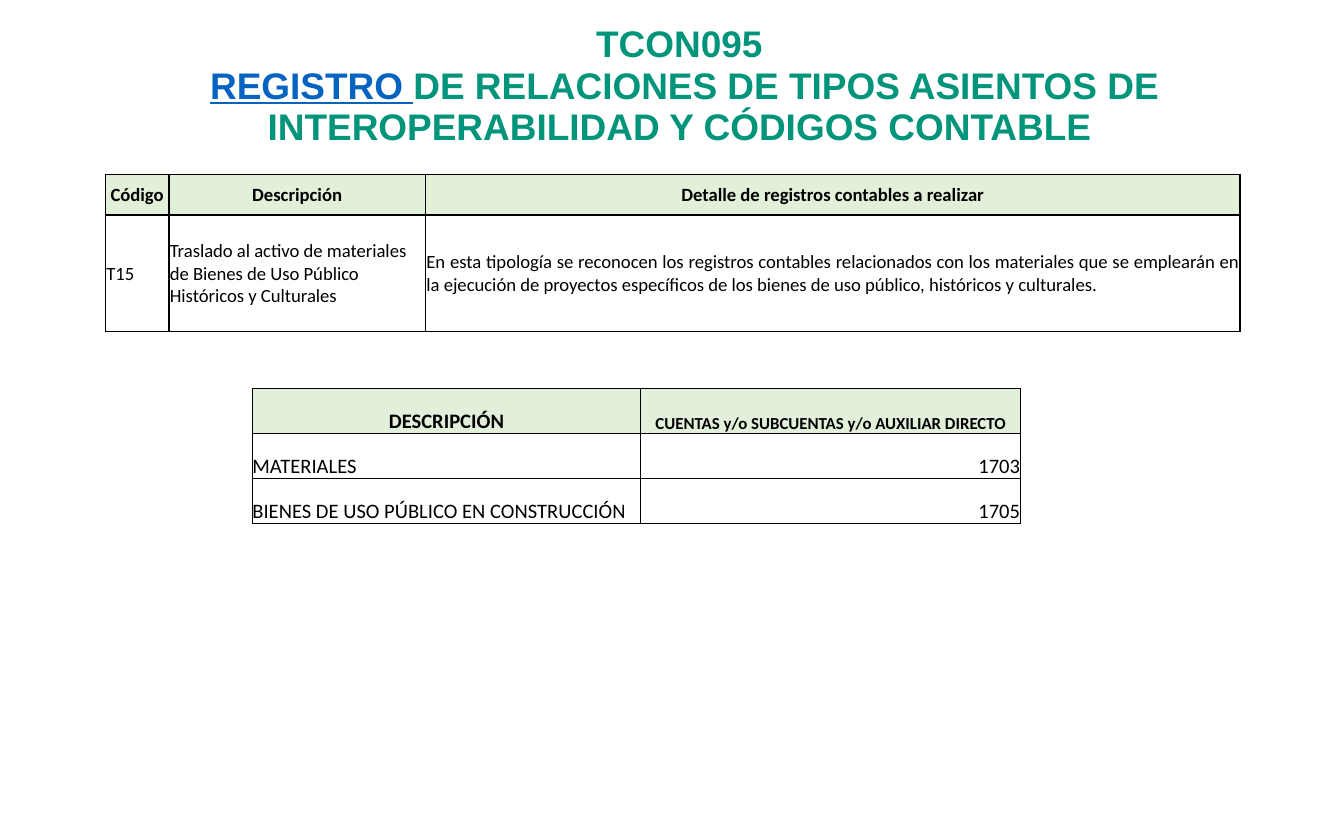
from lxml import etree
from pptx import Presentation
from pptx import util as u
from pptx.dml.color import RGBColor
from pptx.enum import text
from pptx.oxml import ns

GREEN = RGBColor(0x00, 0x94, 0x7A)
BLUE = RGBColor(0x05, 0x63, 0xC1)
BLACK = RGBColor(0x00, 0x00, 0x00)
HEADER_SAGE = RGBColor(0xE2, 0xEF, 0xD9)
HEADER_MINT = RGBColor(0xE2, 0xEF, 0xDA)

LEFT, CENTER = text.PP_ALIGN.LEFT, text.PP_ALIGN.CENTER
RIGHT, JUSTIFY = text.PP_ALIGN.RIGHT, text.PP_ALIGN.JUSTIFY
MIDDLE, BOTTOM = text.MSO_ANCHOR.MIDDLE, text.MSO_ANCHOR.BOTTOM


def write(para, words, size=10, font="Calibri", color=BLACK, bold=False, underline=False):
    """Append words to a paragraph, turning each newline into a line break."""
    for index, line in enumerate(words.split("\n")):
        if index:
            para.add_line_break()
        if line:
            span = para.add_run()
            span.text = line
            span.font.size = u.Pt(size)
            span.font.name = font
            span.font.color.rgb = color
            span.font.bold = bold
            span.font.underline = underline


def add_title(page):
    """Add the three-line title with its underlined first word."""
    box = page.shapes.add_textbox(u.Cm(0.28), u.Cm(0.66), u.Cm(25.12), u.Cm(2.72))
    frame = box.text_frame
    frame.word_wrap = True
    frame.vertical_anchor = MIDDLE
    para = frame.paragraphs[0]
    para.alignment = CENTER
    para.line_spacing = 0.94
    style = {"size": 19.8, "font": "Arial", "bold": True}
    write(para, "TCON095\n ", color=GREEN, **style)
    write(para, "REGISTRO ", color=BLUE, underline=True, **style)
    write(para, "DE RELACIONES DE TIPOS ASIENTOS DE INTEROPERABILIDAD Y CÓDIGOS CONTABLE\n",
          color=GREEN, **style)


def add_borders(cell, width):
    """Draw a black line on the four sides of a cell."""
    properties = cell._tc.get_or_add_tcPr()
    for index, side in enumerate(("lnL", "lnR", "lnT", "lnB")):
        line = etree.Element(ns.qn(f"a:{side}"), w=str(u.Pt(width)))
        fill = etree.SubElement(line, ns.qn("a:solidFill"))
        etree.SubElement(fill, ns.qn("a:srgbClr"), val=str(BLACK))
        properties.insert(index, line)


def add_grid(page, left, top, widths, heights, rows, aligns, sizes, header, anchor, border, inset):
    """Add a bordered table whose first row is a bold, centred, filled header."""
    frame = page.shapes.add_table(len(rows), len(widths), u.Cm(left), u.Cm(top),
                                  u.Cm(sum(widths)), u.Cm(sum(heights)))
    table = frame.table
    table.first_row = table.horz_banding = False
    for column, width in zip(table.columns, widths):
        column.width = u.Cm(width)
    for y, (words, height) in enumerate(zip(rows, heights)):
        table.rows[y].height = u.Cm(height)
        for x, word in enumerate(words):
            cell = table.cell(y, x)
            cell.margin_left = cell.margin_right = cell.margin_top = u.Cm(inset)
            cell.margin_bottom = 0
            cell.vertical_anchor = anchor
            if y == 0:
                cell.fill.solid()
                cell.fill.fore_color.rgb = header
            else:
                cell.fill.background()
            add_borders(cell, border)
            para = cell.text_frame.paragraphs[0]
            para.alignment = aligns[x] if y else CENTER
            write(para, word, size=sizes[x] if y == 0 else sizes[0], bold=y == 0)


def main():
    """Build the slide and save it."""
    deck = Presentation()
    deck.slide_width, deck.slide_height = u.Cm(25.4), u.Cm(15.88)
    page = deck.slides.add_slide(deck.slide_layouts[6])
    add_title(page)
    add_grid(
        page, 1.99, 3.3, [1.2, 4.85, 15.39], [0.76, 2.21],
        [["Código", "Descripción", "Detalle de registros contables a realizar"],
         ["T15",
          "Traslado al activo de materiales de Bienes de Uso Público Históricos y Culturales",
          "En esta tipología se reconocen los registros contables relacionados con los "
          "materiales que se emplearán en la ejecución de proyectos específicos de los "
          "bienes de uso público, históricos y culturales."]],
        aligns=[LEFT, LEFT, JUSTIFY], sizes=[10, 10, 10],
        header=HEADER_SAGE, anchor=MIDDLE, border=1, inset=0.02)
    add_grid(
        page, 4.77, 7.35, [7.34, 7.17], [0.85] * 3,
        [["DESCRIPCIÓN", "CUENTAS y/o SUBCUENTAS y/o AUXILIAR DIRECTO"],
         ["MATERIALES", "1703"],
         ["BIENES DE USO PÚBLICO EN CONSTRUCCIÓN", "1705"]],
        aligns=[LEFT, RIGHT], sizes=[11, 9],
        header=HEADER_MINT, anchor=BOTTOM, border=0.5, inset=0)
    deck.save("out.pptx")


if __name__ == "__main__":
    main()
